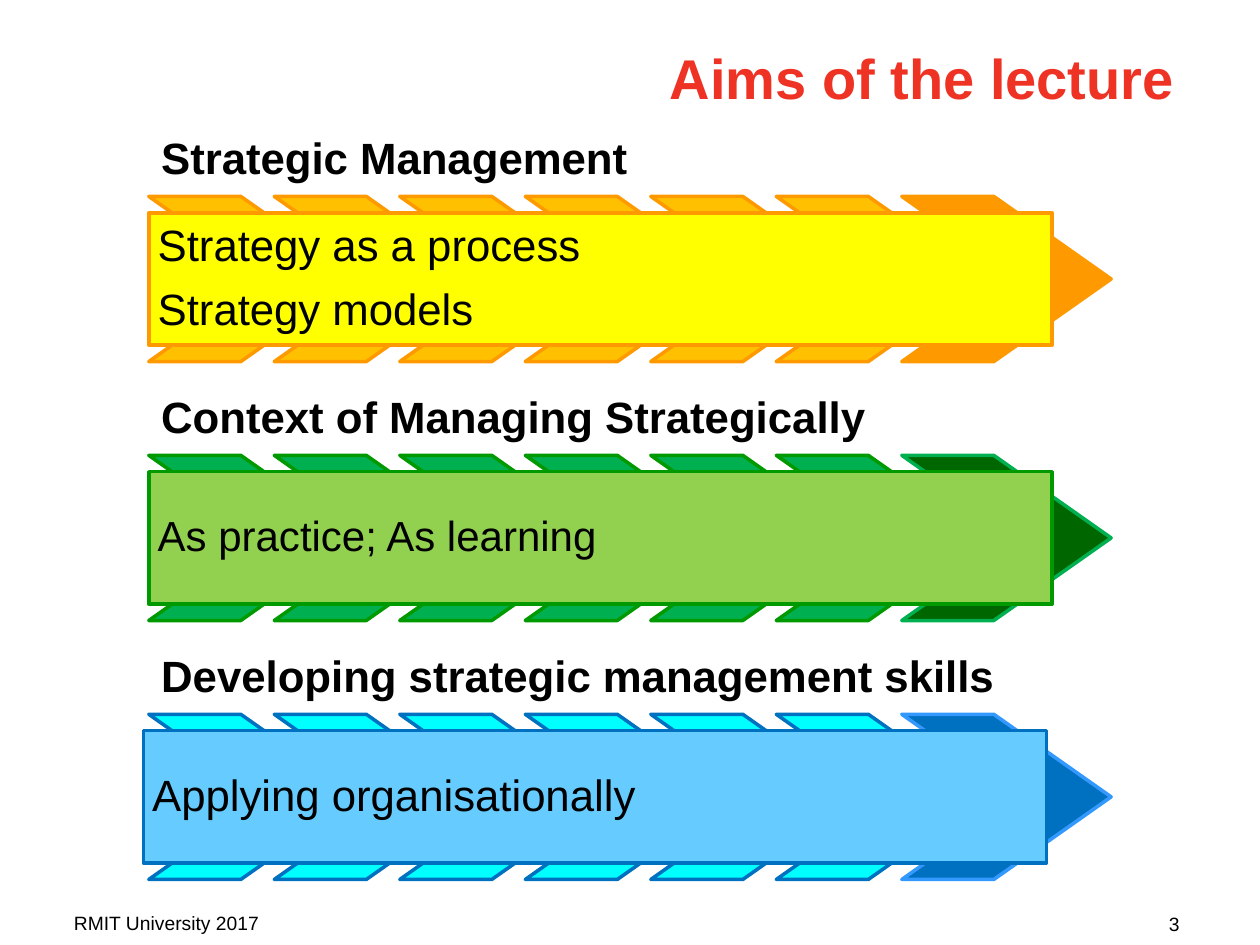
from dataclasses import dataclass

from pptx import Presentation
from pptx.dml.color import RGBColor
from pptx.enum.shapes import MSO_SHAPE
from pptx.enum.text import MSO_ANCHOR, PP_ALIGN
from pptx.util import Cm, Pt

LEFT, RIGHT = PP_ALIGN.LEFT, PP_ALIGN.RIGHT
TOP, MIDDLE, BOTTOM = MSO_ANCHOR.TOP, MSO_ANCHOR.MIDDLE, MSO_ANCHOR.BOTTOM
CHEVRON, RECT = MSO_SHAPE.CHEVRON, MSO_SHAPE.RECTANGLE


@dataclass(frozen=True)
class Theme:
    font: str = "Arial"
    title: str = "EE3224"
    text: str = "000000"
    title_size: float = 32
    body_size: float = 25
    small_size: float = 11
    line: float = 2


@dataclass(frozen=True)
class Band:
    head: str
    body: str
    panel: str
    edge: str
    fill: str
    tip: str
    tip_edge: str
    size: float = Theme.body_size
    shift: float = 0


THEME = Theme()
BANDS = [
    Band("Strategic Management", "Strategy as a process\nStrategy models",
         "FFFF00", "FF9900", "FFC000", "FF9900", "FF9900"),
    Band("Context of Managing Strategically", "As practice; As learning",
         "92D050", "009900", "00B050", "006600", "00B050", size=24),
    Band("Developing strategic management skills", "Applying organisationally",
         "66CCFF", "0070C0", "00FFFF", "0070C0", "3399FF", shift=-0.11),
]
BAND_X, BAND_Y, BAND_STEP = 3, 3.96, 5.22
COUNT, STEP = 7, 2.53
CHEV_W, CHEV_H = 4.22, 3.33
HEAD_W, HEAD_H = 17.98, 1.63
PANEL_W, PANEL_H = 18.21, 2.67


def write(shape, text, size, color=THEME.text, bold=False, align=LEFT,
          anchor=TOP, inset=None, spacing=None):
    frame = shape.text_frame
    frame.word_wrap = True
    frame.vertical_anchor = anchor
    if inset is not None:
        frame.margin_left = frame.margin_right = Cm(inset)
        frame.margin_top = frame.margin_bottom = Cm(inset)
    frame.text = text
    for para in frame.paragraphs:
        para.alignment = align
        if spacing:
            para.line_spacing = spacing
            para.space_after = Pt(9.5)
        for run in para.runs:
            run.font.name = THEME.font
            run.font.size = Pt(size)
            run.font.bold = bold
            run.font.color.rgb = RGBColor.from_string(color)


def add_label(slide, x, y, w, h, text, size, **style):
    box = slide.shapes.add_textbox(Cm(x), Cm(y), Cm(w), Cm(h))
    write(box, text, size, **style)


def add_block(slide, kind, x, y, w, h, fill, edge):
    shape = slide.shapes.add_shape(kind, Cm(x), Cm(y), Cm(w), Cm(h))
    shape.shadow.inherit = False
    shape.fill.solid()
    shape.fill.fore_color.rgb = RGBColor.from_string(fill)
    shape.line.color.rgb = RGBColor.from_string(edge)
    shape.line.width = Pt(THEME.line)
    return shape


def add_band(slide, band, top):
    """Draw a heading, its row of chevrons and the panel over them."""
    add_label(slide, BAND_X, top - HEAD_H, HEAD_W, HEAD_H, band.head,
              THEME.body_size, bold=True, anchor=BOTTOM, inset=0.25,
              spacing=0.9)
    for i in range(COUNT):
        last = i == COUNT - 1
        fill, edge = ((band.tip, band.tip_edge) if last
                      else (band.fill, band.edge))
        chev = add_block(slide, CHEVRON, BAND_X + i * STEP, top,
                         CHEV_W, CHEV_H, fill, edge)
        chev.adjustments[0] = 0.71
    panel = add_block(slide, RECT, BAND_X + band.shift,
                      top + (CHEV_H - PANEL_H) / 2, PANEL_W, PANEL_H,
                      band.panel, band.edge)
    write(panel, band.body, band.size, anchor=MIDDLE, inset=0.18, spacing=0.9)


def main():
    deck = Presentation()
    deck.slide_width, deck.slide_height = Cm(25.4), Cm(19.05)
    slide = deck.slides.add_slide(deck.slide_layouts[6])
    add_label(slide, 1.07, 0.76, 22.86, 2.57, "Aims of the lecture",
              THEME.title_size, color=THEME.title, bold=True, align=RIGHT)
    for i, band in enumerate(BANDS):
        add_band(slide, band, BAND_Y + i * BAND_STEP)
    add_label(slide, 18.11, 18.26, 5.92, 0.61, "3", THEME.small_size,
              align=RIGHT)
    add_label(slide, 1.24, 18.24, 5.92, 0.61, "RMIT University 2017",
              THEME.small_size)
    deck.save("out.pptx")


if __name__ == "__main__":
    main()
